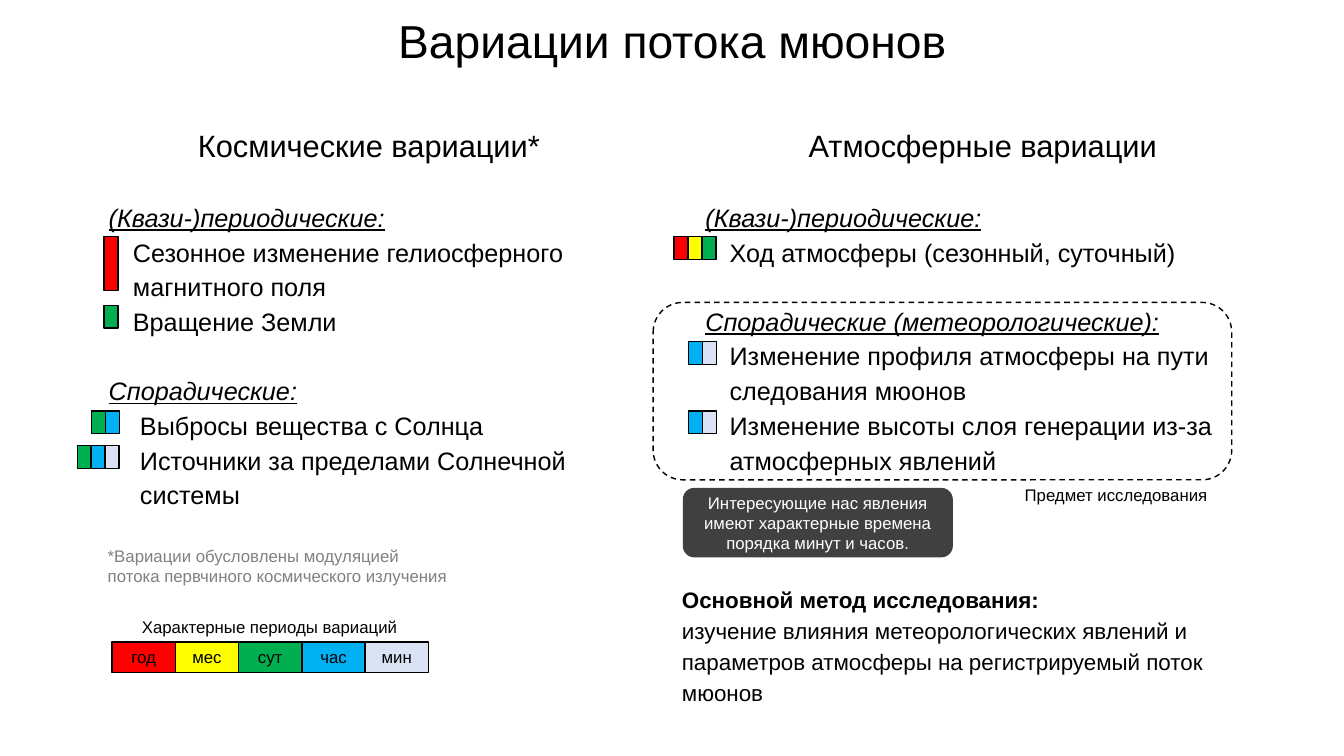
from dataclasses import dataclass

from lxml.etree import SubElement
from pptx import Presentation
from pptx.dml.color import RGBColor
from pptx.dml.fill import FillFormat
from pptx.enum.dml import MSO_LINE
from pptx.enum.shapes import MSO_SHAPE
from pptx.enum.text import MSO_ANCHOR, PP_ALIGN
from pptx.oxml.ns import qn
from pptx.shapes.autoshape import Shape
from pptx.text.text import TextFrame
from pptx.util import Inches, Pt

WIDTH, HEIGHT = Inches(13.33), Inches(7.5)
COLUMNS = ROWS = 100
BLACK, WHITE, GREY = "000000", "FFFFFF", "808080"
YEAR, MONTH, DAY, HOUR, MINUTE = "FF0000", "FFFF00", "00B050", "00B0F0", "DAE3F3"
CHIP_WIDTH, CHIP_HEIGHT = 1.04, 3
BLANK_LINE = 24.5


@dataclass(frozen=True)
class Box:
    """Left, top, width and height in grid columns and rows."""
    left: float
    top: float
    width: float
    height: float

    def lengths(self) -> tuple[int, int, int, int]:
        return (int(WIDTH * self.left / COLUMNS), int(HEIGHT * self.top / ROWS),
                int(WIDTH * self.width / COLUMNS), int(HEIGHT * self.height / ROWS))


@dataclass(frozen=True)
class Line:
    text: str
    size: float = 18
    color: str = BLACK
    align: PP_ALIGN = PP_ALIGN.LEFT
    spacing: float = 1.0
    before: float = 0
    indent: float = 0
    bold: bool = False
    subheading: bool = False


@dataclass(frozen=True)
class Marker:
    """A row of touching chips, one for each period."""
    left: float
    top: float
    periods: tuple[str, ...]
    height: float = CHIP_HEIGHT


@dataclass(frozen=True)
class TextBlock:
    box: Box
    lines: tuple[Line, ...]
    wrap: bool = True


def heading(text: str) -> Line:
    return Line(text, size=22, align=PP_ALIGN.CENTER, spacing=1.15)


def subheading(text: str) -> Line:
    return Line(text, spacing=1.15, before=BLANK_LINE, subheading=True)


def item(text: str, indent: float = 0.24) -> Line:
    return Line(text, spacing=1.15, indent=indent)


COSMIC = TextBlock(Box(7.35, 15.33, 40.2, 52.93), (
    heading("Космические вариации*"),
    subheading("(Квази-)периодические:"),
    item("Сезонное изменение гелиосферного магнитного поля"),
    item("Вращение Земли"),
    subheading("Спорадические:"),
    item("Выбросы вещества с Солнца", 0.31),
    item("Источники за пределами Солнечной системы", 0.31),
))
ATMOSPHERIC = TextBlock(Box(51.75, 15.33, 42.75, 48.4), (
    heading("Атмосферные вариации"),
    subheading("(Квази-)периодические:"),
    item("Ход атмосферы (сезонный, суточный)"),
    subheading("Спорадические (метеорологические):"),
    item("Изменение профиля атмосферы на пути следования мюонов"),
    item("Изменение высоты слоя генерации из-за атмосферных явлений"),
))
SUBJECT = TextBlock(Box(75.5, 63.47, 15.22, 4),
                    (Line("Предмет исследования", size=12),), wrap=False)
FOOTNOTE = TextBlock(Box(7.28, 71.47, 27.22, 6.67), (
    Line("*Вариации обусловлены модуляцией потока первчиного космического излучения",
         size=12, color=GREY),
))
METHOD = TextBlock(Box(50, 76.4, 46.13, 17.73), (
    Line("Основной метод исследования:", size=16, spacing=1.15, bold=True),
    Line("изучение влияния метеорологических явлений и параметров атмосферы "
         "на регистрируемый поток мюонов", size=16, spacing=1.15),
))
LEGEND_TITLE = TextBlock(Box(9.82, 80.93, 20.55, 4),
                         (Line("Характерные периоды вариаций", size=12),), wrap=False)
LEGEND_CELL = Box(8.33, 84.93, 4.71, 4)
LEGEND = {"год": YEAR, "мес": MONTH, "сут": DAY, "час": HOUR, "мин": MINUTE}
MARKERS = (
    Marker(7.75, 31.25, (YEAR,), height=7.2),
    Marker(7.75, 40.4, (DAY,)),
    Marker(6.8, 54.35, (DAY, HOUR)),
    Marker(5.75, 58.95, (DAY, HOUR, MINUTE)),
    Marker(50.15, 31.3, (YEAR, MONTH, DAY)),
    Marker(51.25, 45.2, (HOUR, MINUTE)),
    Marker(51.25, 54.35, (HOUR, MINUTE)),
)
SUBJECT_FRAME = Box(48.6, 40, 43.05, 23.47)
CALLOUT = Box(50.8, 64.53, 20.1, 9.2)
CALLOUT_LINE = Line("Интересующие нас явления имеют характерные времена порядка минут и часов.",
                    size=12, color=WHITE, align=PP_ALIGN.CENTER)
TITLE_BOX = Box(6.9, 0.53, 86.25, 10.53)
TITLE_LINE = Line("Вариации потока мюонов", size=33, align=PP_ALIGN.CENTER, spacing=0.9)


def paint(fill: FillFormat, color: str) -> None:
    fill.solid()
    fill.fore_color.rgb = RGBColor.from_string(color)


def write(frame: TextFrame, lines: tuple[Line, ...], wrap: bool = True) -> None:
    frame.word_wrap = wrap
    for index, line in enumerate(lines):
        paragraph = frame.add_paragraph() if index else frame.paragraphs[0]
        paragraph.text = line.text
        paragraph.alignment = line.align
        paragraph.line_spacing = line.spacing
        paragraph.space_before = Pt(line.before)
        if line.indent:
            paragraph._p.get_or_add_pPr().set("marL", str(Inches(line.indent)))
        font = paragraph.font
        font.name, font.size, font.bold = "Arial", Pt(line.size), line.bold
        font.italic = font.underline = line.subheading
        font.color.rgb = RGBColor.from_string(line.color)


def add_text(shapes, block: TextBlock) -> None:
    write(shapes.add_textbox(*block.box.lengths()).text_frame, block.lines, block.wrap)


def add_panel(shapes, kind: MSO_SHAPE, box: Box, fill: str | None = None) -> Shape:
    """Add a flat shape with a thin black outline."""
    shape = shapes.add_shape(kind, *box.lengths())
    shape.shadow.inherit = False
    if fill:
        paint(shape.fill, fill)
    else:
        shape.fill.background()
    paint(shape.line.fill, BLACK)
    shape.line.width = Pt(1)
    return shape


def add_marker(shapes, marker: Marker) -> None:
    for index, period in enumerate(marker.periods):
        box = Box(marker.left + index * CHIP_WIDTH, marker.top, CHIP_WIDTH, marker.height)
        add_panel(shapes, MSO_SHAPE.RECTANGLE, box, period)


def add_legend(shapes) -> None:
    group = shapes.add_group_shape().shapes
    for index, (label, period) in enumerate(LEGEND.items()):
        box = Box(LEGEND_CELL.left + index * LEGEND_CELL.width, LEGEND_CELL.top,
                  LEGEND_CELL.width, LEGEND_CELL.height)
        cell = add_panel(group, MSO_SHAPE.RECTANGLE, box, period)
        write(cell.text_frame, (Line(label, size=12, align=PP_ALIGN.CENTER),))
    add_text(group, LEGEND_TITLE)


def add_callout(shapes) -> None:
    callout = add_panel(shapes, MSO_SHAPE.FLOWCHART_ALTERNATE_PROCESS, CALLOUT, BLACK)
    callout.line.fill.background()
    color = callout.fill._xPr.find(qn("a:solidFill"))[0]
    SubElement(color, qn("a:alpha")).set("val", "75000")
    callout.text_frame.vertical_anchor = MSO_ANCHOR.MIDDLE
    write(callout.text_frame, (CALLOUT_LINE,))


def main() -> None:
    presentation = Presentation()
    presentation.slide_width, presentation.slide_height = WIDTH, HEIGHT
    slide = presentation.slides.add_slide(presentation.slide_layouts[5])
    shapes = slide.shapes

    title = shapes.title
    title.left, title.top, title.width, title.height = TITLE_BOX.lengths()
    title.text_frame.vertical_anchor = MSO_ANCHOR.MIDDLE
    write(title.text_frame, (TITLE_LINE,))

    frame = add_panel(shapes, MSO_SHAPE.FLOWCHART_ALTERNATE_PROCESS, SUBJECT_FRAME)
    frame.line.dash_style = MSO_LINE.DASH
    for block in (COSMIC, ATMOSPHERIC, SUBJECT, FOOTNOTE, METHOD):
        add_text(shapes, block)
    for marker in MARKERS:
        add_marker(shapes, marker)
    add_legend(shapes)
    add_callout(shapes)
    presentation.save("out.pptx")


if __name__ == "__main__":
    main()
